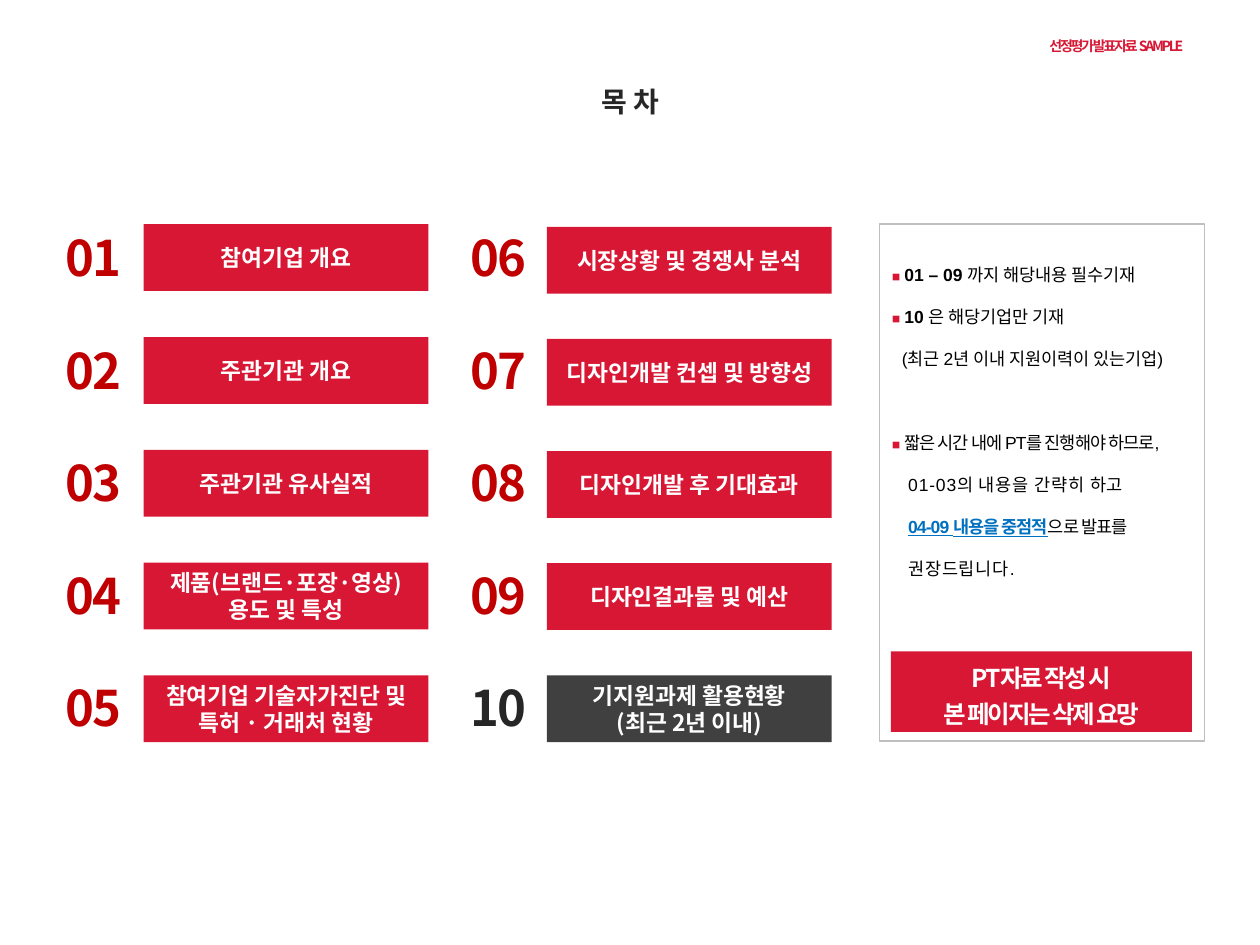
import pptx
import pptx.util
import pptx.dml.color
import pptx.enum.shapes
import pptx.enum.text
import lxml.etree
import pptx.oxml.ns

Inches, Pt = pptx.util.Inches, pptx.util.Pt
RGB = pptx.dml.color.RGBColor
SHAPE = pptx.enum.shapes.MSO_SHAPE
ALIGN = pptx.enum.text.PP_ALIGN
ANCHOR = pptx.enum.text.MSO_ANCHOR
qn = pptx.oxml.ns.qn

RED = RGB(0xD7, 0x17, 0x33)
DEEP = RGB(0xC0, 0x00, 0x00)
DARK = RGB(0x26, 0x26, 0x26)
SLATE = RGB(0x40, 0x40, 0x40)
GRAY = RGB(0xBF, 0xBF, 0xBF)
BLUE = RGB(0x00, 0x70, 0xC0)
BLACK = RGB(0, 0, 0)
WHITE = RGB(0xFF, 0xFF, 0xFF)
SANS = "Noto Sans CJK KR"

TITLE = "목 차"
HEADER = "선정평가 발표자료 SAMPLE"
# number left, box left, box top, row pitch, topics
COLUMNS = [
    (0.35, 1.14, 1.78, 0.895, [
        ["참여기업 개요"],
        ["주관기관 개요"],
        ["주관기관 유사실적"],
        ["제품(브랜드·포장·영상)", "용도 및 특성"],
        ["참여기업 기술자가진단 및", "특허 · 거래처 현황"],
    ]),
    (3.56, 4.34, 1.8, 0.89, [
        ["시장상황 및 경쟁사 분석"],
        ["디자인개발 컨셉 및 방향성"],
        ["디자인개발 후 기대효과"],
        ["디자인결과물 및 예산"],
        ["기지원과제 활용현황", "(최근 2년 이내)"],
    ]),
]
BOLD = {"bold": True}
TIGHT = {"gap": -0.5}
WIDE = {"gap": 0.5}
MARK = {"bold": True, "line": True, "color": BLUE, "gap": -0.5}
# bulleted, left margin, space before, runs
NOTES = [
    (True, 0.1, 0, [("01 – 09 ", BOLD), ("까지 해당내용 필수기재", {})]),
    (True, 0.1, 0, [("10 ", BOLD), ("은 해당기업만 기재", {})]),
    (False, 0.08, 0, [("(최근 2년 이내 지원이력이 있는기업)", {})]),
    (True, 0.1, 24, [("짧은 시간 내에 PT를 진행해야 하므로,", TIGHT)]),
    (False, 0.13, 0, [("01-03의 내용을 간략히 하고", WIDE)]),
    (False, 0.13, 0, [("04-09 내용을 중점적", MARK), ("으로 발표를", TIGHT)]),
    (False, 0.13, 0, [("권장드립니다.", WIDE)]),
]
WARNING = ["PT자료 작성 시", "본 페이지는 삭제 요망"]

deck = pptx.Presentation()
deck.slide_width, deck.slide_height = Inches(10), Inches(7.5)
slide = deck.slides.add_slide(deck.slide_layouts[6])


def add_run(para, text, size=10, color=BLACK, bold=False, face=SANS,
            gap=0, line=False):
    run = para.add_run()
    run.text = text
    font = run.font
    font.size, font.bold, font.name = Pt(size), bold, face
    font.underline = line
    font.color.rgb = color
    props = font._element
    props.set("spc", str(round(gap * 100)))
    east = lxml.etree.Element(qn("a:ea"), typeface=SANS)
    props.find(qn("a:latin")).addnext(east)


def write(shape, lines, space=None, anchor=ANCHOR.TOP, inset=None, **style):
    """Fill a shape with centred lines of one style."""
    frame = shape.text_frame
    frame.word_wrap = True
    frame.vertical_anchor = anchor
    if inset is not None:
        frame.margin_left = frame.margin_right = Inches(inset)
        frame.margin_top = frame.margin_bottom = Inches(inset)
    for i, text in enumerate(lines):
        para = frame.add_paragraph() if i else frame.paragraphs[0]
        para.alignment = ALIGN.CENTER
        if space:
            para.line_spacing = space
        add_run(para, text, **style)


def add_text(*place):
    return slide.shapes.add_textbox(*map(Inches, place))


def add_box(kind, place, fill=None, edge=None):
    box = slide.shapes.add_shape(kind, *map(Inches, place))
    box.shadow.inherit = False
    if fill is None:
        box.fill.background()
    else:
        box.fill.solid()
        box.fill.fore_color.rgb = fill
    if edge is None:
        box.line.fill.background()
    else:
        box.line.color.rgb = edge
        box.line.width = Pt(1)
    return box


def set_bullet(para):
    props = para._p.get_or_add_pPr()
    tint = lxml.etree.SubElement(props, qn("a:buClr"))
    lxml.etree.SubElement(tint, qn("a:srgbClr"), val=str(RED))
    lxml.etree.SubElement(props, qn("a:buFont"), typeface=SANS)
    lxml.etree.SubElement(props, qn("a:buChar"), char="◾")


def add_notes():
    frame = add_text(6.98, 1.88, 2.67, 2.74).text_frame
    frame.word_wrap = True
    for i, (dot, left, before, runs) in enumerate(NOTES):
        para = frame.add_paragraph() if i else frame.paragraphs[0]
        para.line_spacing = 2.0
        if before:
            para.space_before = Pt(before)
        props = para._p.get_or_add_pPr()
        props.set("marL", str(Inches(left)))
        props.set("indent", str(-Inches(left) if dot else 0))
        if dot:
            set_bullet(para)
        for text, style in runs:
            add_run(para, text, face="Arial", **style)


write(add_text(1.32, 0.55, 7.36, 0.46), [TITLE], space=1.2,
      anchor=ANCHOR.MIDDLE, inset=0.06, size=16, color=DARK, bold=True)
write(add_text(8.15, 0.25, 1.42, 0.24), [HEADER],
      size=8, color=RED, bold=True, gap=-1.3)

count = 0
total = sum(len(column[-1]) for column in COLUMNS)
for num_x, box_x, top, pitch, topics in COLUMNS:
    for row, lines in enumerate(topics):
        count += 1
        last = count == total
        box = add_box(SHAPE.ROUNDED_RECTANGLE,
                      (box_x, top + row * pitch, 2.26, 0.53),
                      SLATE if last else RED)
        box.adjustments[0] = 0
        write(box, lines, anchor=ANCHOR.MIDDLE, inset=0,
              size=13, color=WHITE, bold=True)
        write(add_text(num_x, 1.76 + row * 0.893, 0.79, 0.57),
              [f"{count:02}"], size=28, bold=True, gap=-1,
              color=DARK if last else DEEP)

add_box(SHAPE.RECTANGLE, (6.98, 1.78, 2.58, 4.1), edge=GRAY)
add_notes()
write(add_box(SHAPE.RECTANGLE, (7.07, 5.17, 2.39, 0.64), RED), WARNING,
      space=1.2, size=14, color=WHITE, bold=True, gap=-1.3)

deck.save("out.pptx")
